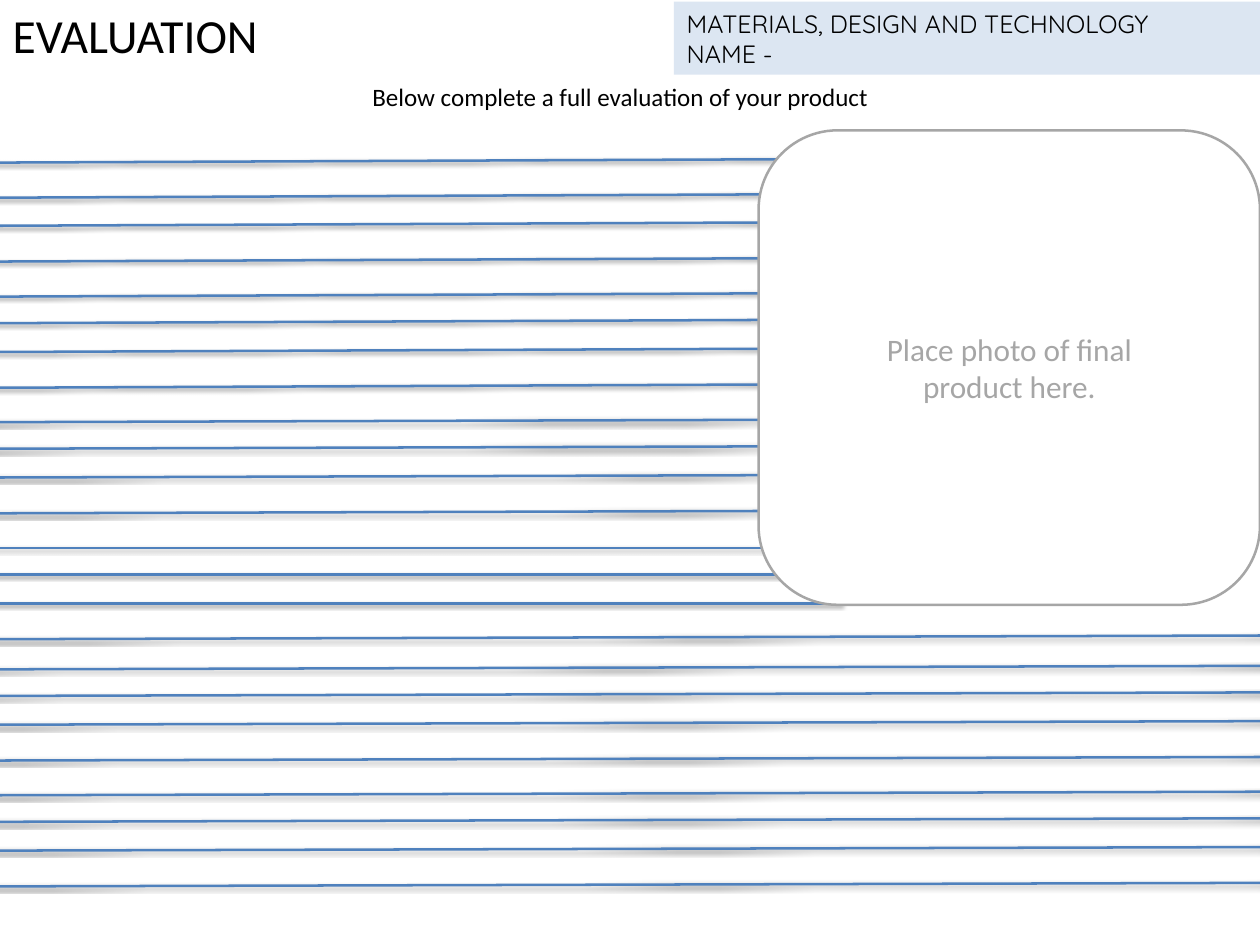
import pptx
import pptx.util
import pptx.dml.color
import pptx.enum.shapes
import pptx.enum.text
import pptx.oxml
import pptx.oxml.ns
from dataclasses import dataclass

Cm, Pt = pptx.util.Cm, pptx.util.Pt
Shape = pptx.enum.shapes.MSO_SHAPE
Align = pptx.enum.text.PP_ALIGN
Anchor = pptx.enum.text.MSO_ANCHOR
Fit = pptx.enum.text.MSO_AUTO_SIZE


@dataclass(frozen=True)
class Theme:
    ink: str = "000000"
    band: str = "DCE6F2"
    rule: str = "4F81BD"
    paper: str = "FFFFFF"
    grey: str = "A6A6A6"
    body: str = "Calibri"
    label: str = "Quicksand"
    title: int = 38
    text: int = 20
    photo: int = 25
    stroke: int = 2


theme = Theme()

SHADOW = (
    f'<a:effectLst {pptx.oxml.ns.nsdecls("a")}>'
    f'<a:outerShdw blurRad="{Pt(3.1)}" dist="{Pt(1.6)}" dir="5400000" rotWithShape="0">'
    f'<a:srgbClr val="{theme.ink}"><a:alpha val="38000"/></a:srgbClr>'
    '</a:outerShdw></a:effectLst>'
)

STEPS = (0, 0.75, 1.56, 2.57)
FIRST = (0, 0.99, 1.78, 2.79)
RISE = 0.11
BANDS = [
    (0, FIRST, [(-2.51, 23.32), (-2.64, 23.19), (-2.03, 23.77), (-2.03, 23.77)]),
    (3.78, STEPS, [(-2.03, 23.77)] * 2 + [(-1.45, 24.38)] * 2),
    (7.32, STEPS, [(-2.03, 34.16)] * 2 + [(-1.22, 35)] * 2),
    (10.87, STEPS, [(-1.17, 32.89), (-1.17, 23.19), (-0.3, 23.77), (-0.3, 37.36)]),
    (14.3, STEPS, [(-3.18, 36.07)] * 2 + [(-2.26, 36.98)] * 2),
    (17.85, STEPS, [(-2.26, 36.98)] * 2 + [(-1.37, 37.87)] * 2),
]
LEVEL = {(3, 0), (3, 1), (3, 2)}


def tint(code):
    return pptx.dml.color.RGBColor.from_string(code)


def write(shape, lines, font, size, color, align=Align.LEFT, anchor=Anchor.TOP):
    frame = shape.text_frame
    frame.word_wrap = True
    frame.auto_size = Fit.NONE
    frame.vertical_anchor = anchor
    frame.margin_left = frame.margin_right = Cm(0.36)
    frame.margin_top = frame.margin_bottom = Cm(0.18)
    frame.text = "\n".join(lines)
    for para in frame.paragraphs:
        para.alignment = align
        para.font.name = font
        para.font.size = Pt(size)
        para.font.color.rgb = tint(color)


def panel(slide, kind, box, fill, line=None):
    shape = slide.shapes.add_shape(kind, *map(Cm, box))
    shape.shadow.inherit = False
    shape.fill.solid()
    shape.fill.fore_color.rgb = tint(fill)
    if line:
        shape.line.color.rgb = tint(line)
        shape.line.width = Pt(theme.stroke)
    else:
        shape.line.fill.background()
    return shape


def header(slide, box):
    left, top, width, height = box
    title = slide.shapes.add_textbox(Cm(left), Cm(top), Cm(23.19), Cm(1.98))
    write(title, ["EVALUATION"], theme.body, theme.title, theme.ink)
    start = left + 19.02
    name = panel(slide, Shape.RECTANGLE,
                 (start, top + 0.05, left + width - start, 2.06), theme.band)
    write(name, ["MATERIALS, DESIGN AND TECHNOLOGY", "NAME -"],
          theme.label, theme.text, theme.ink)
    task = slide.shapes.add_textbox(Cm(left), Cm(top + 2.11), Cm(35), Cm(height - 2.11))
    write(task, ["Below complete a full evaluation of your product"],
          theme.body, theme.text, theme.ink, Align.CENTER)


def rules(slide, left, top):
    for band, (start, steps, spans) in enumerate(BANDS):
        for row, (step, (x1, x2)) in enumerate(zip(steps, spans)):
            y = top + start + step
            end = y if (band, row) in LEVEL else y - RISE
            line = slide.shapes.add_connector(
                pptx.enum.shapes.MSO_CONNECTOR.STRAIGHT,
                Cm(left + x1), Cm(y), Cm(left + x2), Cm(end))
            line.line.color.rgb = tint(theme.rule)
            line.line.width = Pt(theme.stroke)
            line._element.spPr.append(pptx.oxml.parse_xml(SHADOW))


def photo(slide, box):
    frame = panel(slide, Shape.ROUNDED_RECTANGLE, box, theme.paper, theme.grey)
    write(frame, ["Place photo of final", "product here."], theme.body,
          theme.photo, theme.grey, Align.CENTER, Anchor.MIDDLE)


def main():
    deck = pptx.Presentation()
    deck.slide_width, deck.slide_height = Cm(35.56), Cm(26.67)
    slide = deck.slides.add_slide(deck.slide_layouts[6])
    header(slide, (0, 0, 35.56, 3.33))
    rules(slide, 0, 4.6)
    photo(slide, (21.41, 3.68, 14.15, 13.39))
    deck.save("out.pptx")


if __name__ == "__main__":
    main()
